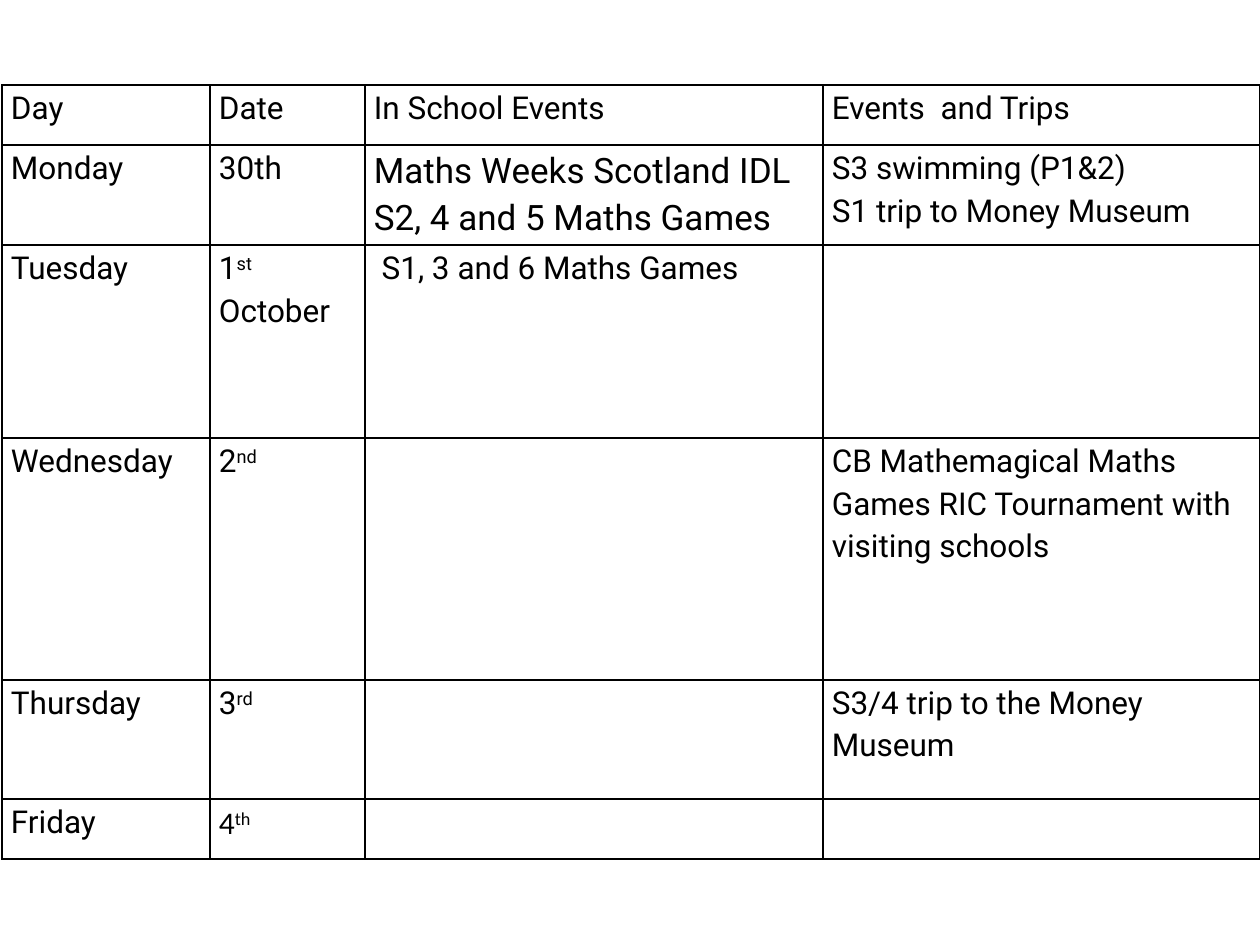
"""Build a one-slide weekly school events table."""
import lxml.etree
import pptx
import pptx.dml.color
import pptx.oxml.ns
import pptx.util

PX = 914400 // 126
COLORS = {"ink": "000000", "paper": "FFFFFF"}
FONT = "Roboto"
COLS = [208, 155, 458, 437]
ROWS = [60, 100, 193, 242, 119, 60]
WEEK = [
    ["Day", "Date", "In School Events", "Events  and Trips"],
    ["Monday", "30th", "Maths Weeks Scotland IDL\nS2, 4 and 5 Maths Games",
     "S3 swimming (P1&2)\nS1 trip to Money Museum"],
    ["Tuesday", "1^st^ October", " S1, 3 and 6 Maths Games", ""],
    ["Wednesday", "2^nd^", "",
     "CB Mathemagical Maths Games RIC Tournament with visiting schools"],
    ["Thursday", "3^rd^", "", "S3/4 trip to the Money Museum"],
    ["Friday", "4^th^", "", ""],
]
SIZES = {(1, 2): 20}
FACES = {(5, 1): "Calibri"}


def px(n):
    """Turn pixels into EMU."""
    return pptx.util.Emu(n * PX)


def rgb(name):
    """Look up a named colour."""
    return pptx.dml.color.RGBColor.from_string(COLORS[name])


def add_edges(cell):
    """Draw a thin line on all four sides of a cell."""
    props = cell._tc.get_or_add_tcPr()
    qn = pptx.oxml.ns.qn
    for spot, side in enumerate(("a:lnL", "a:lnR", "a:lnT", "a:lnB")):
        line = lxml.etree.Element(qn(side), w=str(pptx.util.Pt(1)))
        fill = lxml.etree.SubElement(line, qn("a:solidFill"))
        lxml.etree.SubElement(fill, qn("a:srgbClr"), val=COLORS["ink"])
        props.insert(spot, line)


def add_text(par, text, size, face):
    """Write a paragraph, raising the parts between carets."""
    par.line_spacing = 1.15
    par.font.size = pptx.util.Pt(size)
    par.font.name = face
    par.font.color.rgb = rgb("ink")
    for spot, part in enumerate(text.split("^")):
        if part:
            run = par.add_run()
            run.text = part
            if spot % 2:
                run._r.get_or_add_rPr().set("baseline", "30000")


def fill_cell(cell, text, size, face):
    """Format a cell and write its lines."""
    cell.margin_left = cell.margin_right = px(9)
    cell.margin_top = cell.margin_bottom = 0
    cell.fill.solid()
    cell.fill.fore_color.rgb = rgb("paper")
    add_edges(cell)
    frame = cell.text_frame
    for spot, line in enumerate(text.split("\n")):
        par = frame.add_paragraph() if spot else frame.paragraphs[0]
        add_text(par, line, size, face)


def add_week(slide):
    """Add the table of the week's events."""
    frame = slide.shapes.add_table(
        len(ROWS), len(COLS), px(2), px(85), px(sum(COLS)), px(sum(ROWS)))
    table = frame.table
    table.first_row = table.horz_banding = False
    for col, width in zip(table.columns, COLS):
        col.width = px(width)
    for row, height in zip(table.rows, ROWS):
        row.height = px(height)
    for r, line in enumerate(WEEK):
        for c, text in enumerate(line):
            fill_cell(table.cell(r, c), text,
                      SIZES.get((r, c), 18), FACES.get((r, c), FONT))


def main():
    """Build and save the deck."""
    deck = pptx.Presentation()
    deck.slide_width, deck.slide_height = px(1260), px(945)
    slide = deck.slides.add_slide(deck.slide_layouts[6])
    add_week(slide)
    deck.save("out.pptx")


if __name__ == "__main__":
    main()
